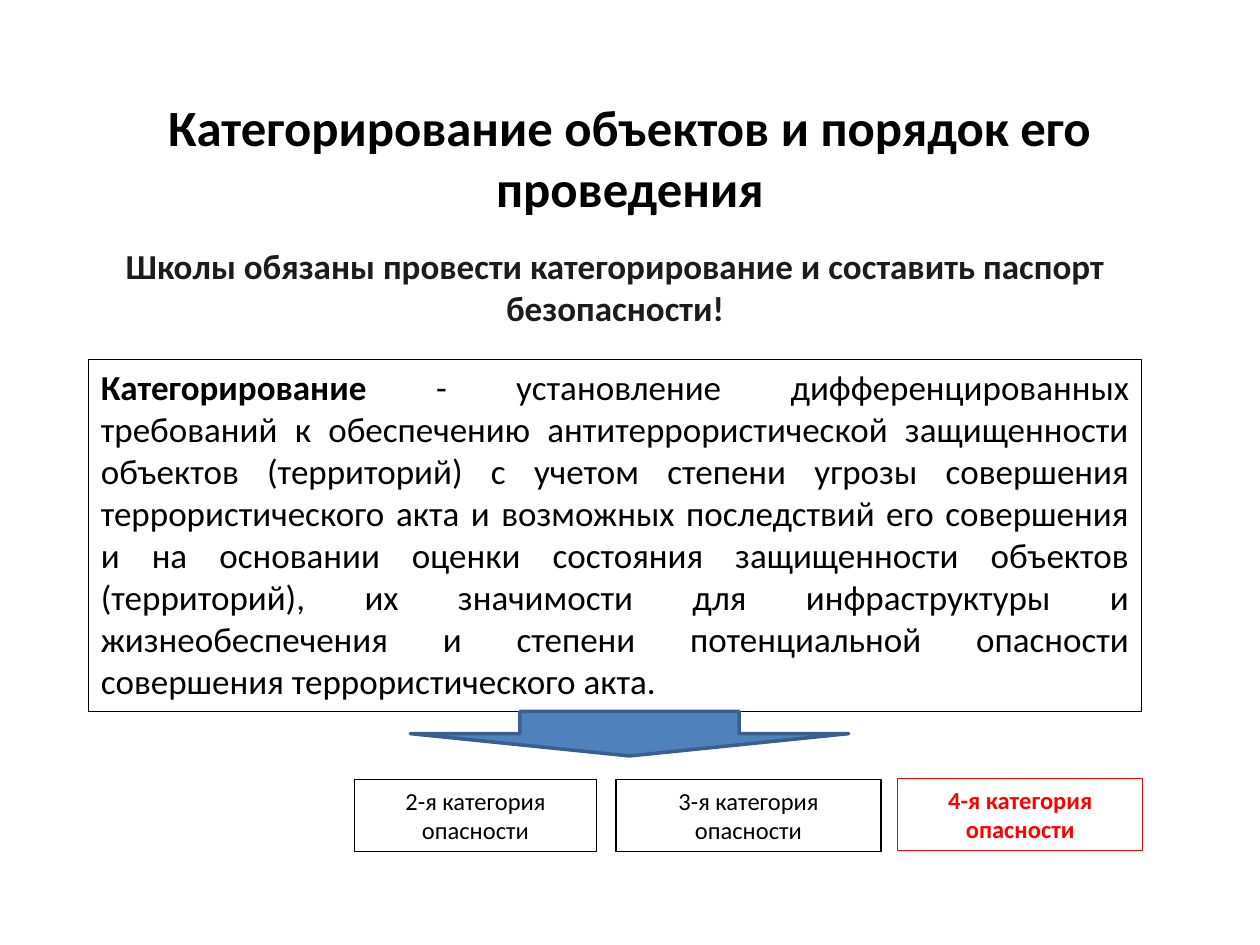
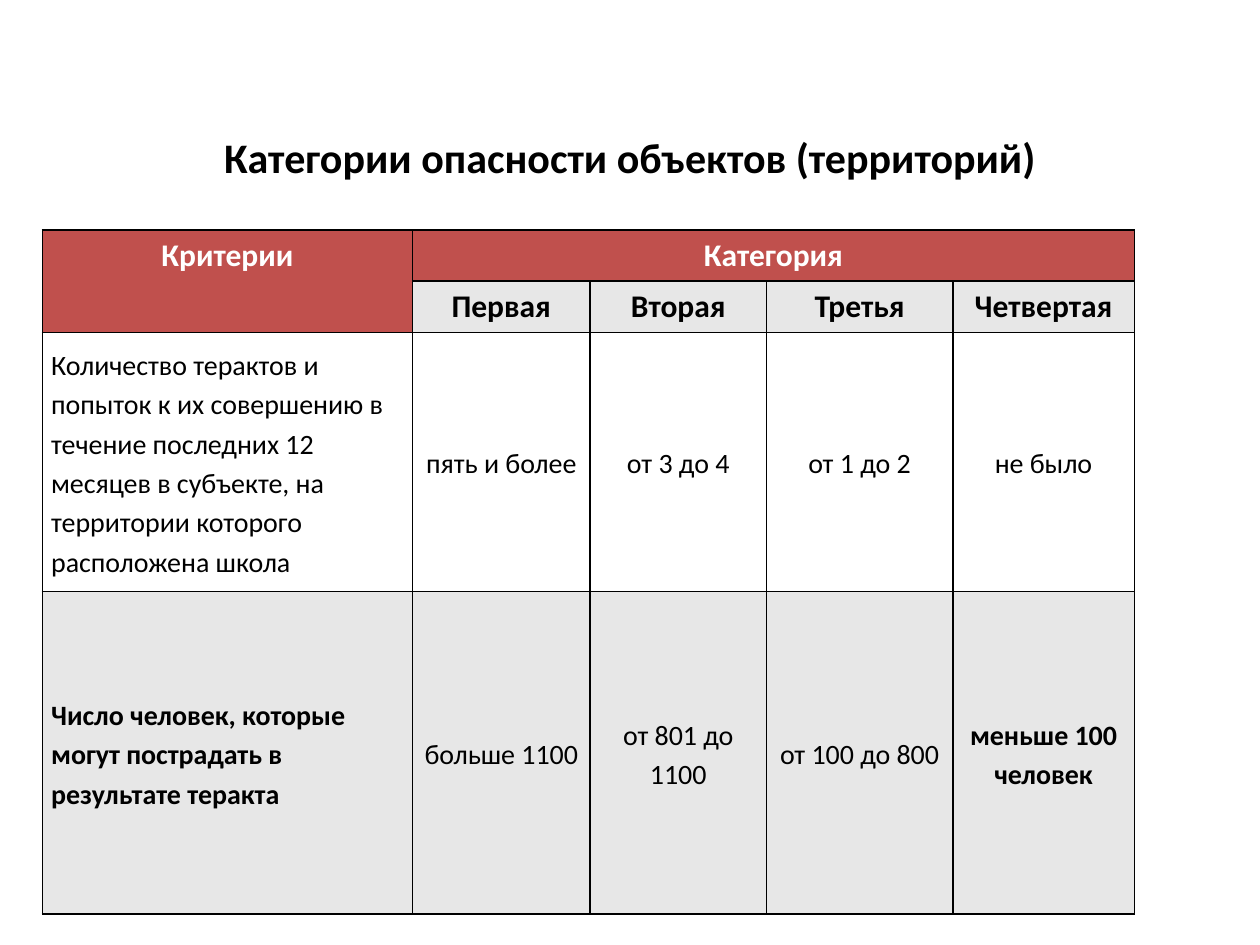
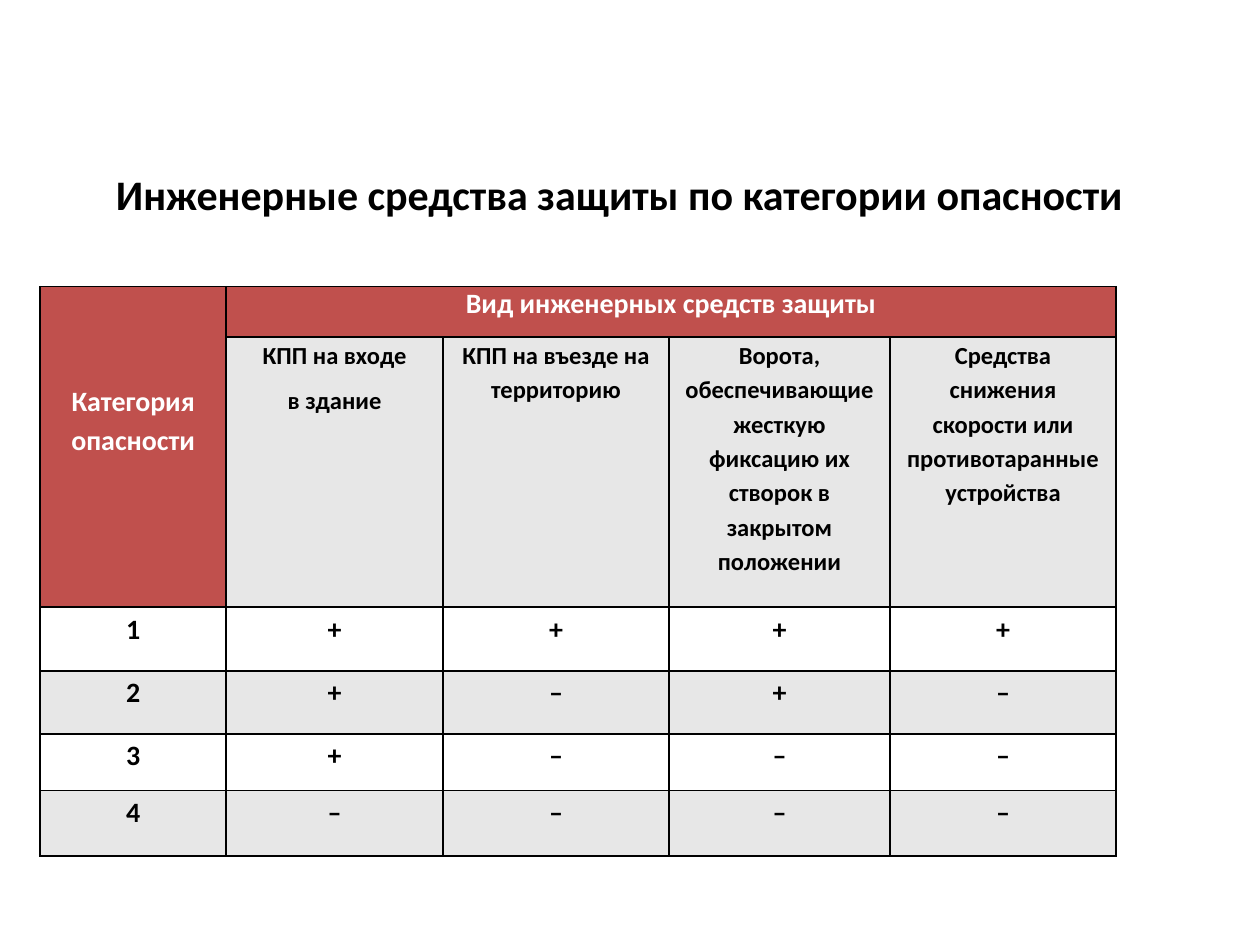
import pptx
import pptx.dml.color
import pptx.enum.shapes
import pptx.enum.text
import pptx.oxml
import pptx.oxml.ns
import pptx.util

Pt = pptx.util.Pt
ALIGN = pptx.enum.text.PP_ALIGN
ANCHOR = pptx.enum.text.MSO_ANCHOR
SHAPE = pptx.enum.shapes.MSO_SHAPE

FONT = "Calibri"
COLORS = {
    "text": "000000", "lead": "1C1C1C", "white": "FFFFFF", "alert": "FF0000",
    "header": "C0504D", "band": "E7E7E7", "arrow": "4F81BD", "arrow_line": "3A5F8C",
}
TITLE_CONTENT, TITLE_ONLY = 1, 5


def rgb(name):
    return pptx.dml.color.RGBColor.from_string(COLORS[name])


def add_run(p, text, size, color="text", bold=False):
    r = p.add_run()
    r.text = text
    r.font.name = FONT
    r.font.size = Pt(size)
    r.font.bold = bold
    r.font.color.rgb = rgb(color)


def place(sp, box):
    sp.left, sp.top, sp.width, sp.height = (Pt(v) for v in box)


def add_slide(prs, layout, title, box, size=24):
    """Slide with its title placeholder moved and formatted."""
    s = prs.slides.add_slide(prs.slide_layouts[layout])
    sp = s.shapes.title
    place(sp, box)
    tf = sp.text_frame
    tf.auto_size = pptx.enum.text.MSO_AUTO_SIZE.NONE
    tf.vertical_anchor = ANCHOR.MIDDLE
    p = tf.paragraphs[0]
    p.alignment = ALIGN.CENTER
    add_run(p, title, size, bold=True)
    return s


# Slide 1 parts
def lead_text(s, box, text):
    sp = s.placeholders[1]
    place(sp, box)
    tf = sp.text_frame
    tf.auto_size = pptx.enum.text.MSO_AUTO_SIZE.NONE
    p = tf.paragraphs[0]
    pPr = p._p.get_or_add_pPr()
    pPr.set("marL", "0")
    pPr.set("indent", "0")
    pPr.append(pptx.oxml.parse_xml(f"<a:buNone {pptx.oxml.ns.nsdecls('a')}/>"))
    p.alignment = ALIGN.CENTER
    p.space_before = Pt(0)
    add_run(p, text, 20, "lead", bold=True)


def framed_text(s, box, runs, size, line="text", align=ALIGN.CENTER):
    sp = s.shapes.add_shape(SHAPE.RECTANGLE, *(Pt(v) for v in box))
    sp.shadow.inherit = False
    sp.fill.background()
    sp.line.color.rgb = rgb(line)
    sp.line.width = Pt(0.75)
    tf = sp.text_frame
    tf.word_wrap = True
    tf.vertical_anchor = ANCHOR.TOP
    p = tf.paragraphs[0]
    p.alignment = align
    for text, bold in runs:
        add_run(p, text, size, line, bold)


def down_arrow(s, box):
    sp = s.shapes.add_shape(SHAPE.DOWN_ARROW, *(Pt(v) for v in box))
    sp.shadow.inherit = False
    sp.fill.solid()
    sp.fill.fore_color.rgb = rgb("arrow")
    sp.line.color.rgb = rgb("arrow_line")
    sp.line.width = Pt(2)


def category_boxes(s, box):
    left, top, height = box
    for number, dx, dy, width, color in (
        (2, 0, 0.5, 138.5, "text"),
        (3, 149.5, 0.5, 151.5, "text"),
        (4, 310.5, 0, 140, "alert"),
    ):
        framed_text(s, (left + dx, top + dy, width, height),
                    [(f"{number}-я категория опасности", color == "alert")], 14, color)


# Tables
def add_borders(cell):
    tcPr = cell._tc.get_or_add_tcPr()
    for i, side in enumerate(("lnL", "lnR", "lnT", "lnB")):
        tcPr.insert(i, pptx.oxml.parse_xml(
            f'<a:{side} {pptx.oxml.ns.nsdecls("a")} w="12700"><a:solidFill>'
            f'<a:srgbClr val="{COLORS["text"]}"/></a:solidFill></a:{side}>'))


def fill_cell(cell, text, fill, size, color="text", bold=False, align=ALIGN.CENTER,
              anchor=ANCHOR.TOP, spacing=1.15, side=5.5, top=0, bottom=0):
    cell.fill.solid()
    cell.fill.fore_color.rgb = rgb(fill)
    add_borders(cell)
    cell.margin_left = cell.margin_right = Pt(side)
    cell.margin_top, cell.margin_bottom = Pt(top), Pt(bottom)
    cell.vertical_anchor = anchor
    tf = cell.text_frame
    for i, line in enumerate(text.split("\n")):
        p = tf.add_paragraph() if i else tf.paragraphs[0]
        p.alignment = align
        p.line_spacing = spacing
        if i:
            p.space_before = Pt(6)
        if line:
            add_run(p, line, size, color, bold)


def category_table(s, left, top, widths, rows):
    """rows: (height, row style, cells); a cell is text or (text, own style)."""
    frame = s.shapes.add_table(len(rows), len(widths), Pt(left), Pt(top),
                               Pt(sum(widths)), Pt(sum(row[0] for row in rows)))
    table = frame.table
    table.first_row = table.horz_banding = False
    for column, width in zip(table.columns, widths):
        column.width = Pt(width)
    for i, (height, style, cells) in enumerate(rows):
        table.rows[i].height = Pt(height)
        for j, item in enumerate(cells):
            text, own = (item, {}) if isinstance(item, str) else item
            fill_cell(table.cell(i, j), text, **{**style, **own})
    # Row header spans two rows, group header spans the other columns
    table.cell(0, 0).merge(table.cell(1, 0))
    table.cell(0, 1).merge(table.cell(0, len(widths) - 1))


def categorization_slide(prs):
    s = add_slide(prs, TITLE_CONTENT, "Категорирование объектов и порядок его проведения",
                  (36, 68.5, 648, 42), 29)
    lead_text(s, (50.5, 136, 602, 340.5),
              "Школы обязаны провести категорирование и составить паспорт безопасности!")
    framed_text(s, (50.5, 205.5, 602, 201), [
        ("Категорирование ", True),
        ("- установление дифференцированных требований к обеспечению антитеррористической "
         "защищенности объектов (территорий) с учетом степени угрозы совершения "
         "террористического акта и возможных последствий его совершения и на основании "
         "оценки состояния защищенности объектов (территорий), их значимости для "
         "инфраструктуры и жизнеобеспечения и степени потенциальной опасности совершения "
         "террористического акта.", False),
    ], 20, align=ALIGN.JUSTIFY)
    down_arrow(s, (234.5, 406.5, 250.5, 25.5))
    category_boxes(s, (202.5, 445, 41))


def danger_slide(prs):
    s = add_slide(prs, TITLE_ONLY, "Категории опасности объектов (территорий)",
                  (36, 68.5, 648, 42))
    head = dict(fill="header", size=18, color="white", bold=True, spacing=1.0,
                side=7.2, top=3.6, bottom=3.6)
    subhead = {**head, "fill": "band", "color": "text"}
    body = dict(fill="white", size=16, anchor=ANCHOR.MIDDLE, side=5)
    bold = dict(bold=True)
    left = dict(align=ALIGN.LEFT)
    category_table(s, 24.25, 131.5, (211.5, 101.5, 100.75, 106.5, 103.75), (
        (29, head, ("Критерии", "Категория", "", "", "")),
        (29, subhead, (("", head), "Первая", "Вторая", "Третья", "Четвертая")),
        (148, body, (
            ("Количество терактов и попыток к их совершению в течение последних 12 месяцев "
             "в субъекте, на территории которого расположена школа", left),
            "пять и более", "от 3 до 4", "от 1 до 2", "не было")),
        (184.5, {**body, "fill": "band"}, (
            ("Число человек, которые могут пострадать в результате теракта", {**left, **bold}),
            "больше 1100", "от 801 до 1100", "от 100 до 800",
            ("меньше 100 человек", bold))),
    ))


def protection_slide(prs):
    s = add_slide(prs, TITLE_ONLY, "Инженерные средства защиты по категории опасности",
                  (30, 89.5, 648, 42.5))
    head = dict(fill="header", size=16, color="white", bold=True)
    subhead = dict(fill="band", size=14, bold=True)
    rows = [
        (28.75, {**head, "spacing": 1.0}, (
            ("Категория опасности", dict(spacing=1.15, top=53)),
            "Вид инженерных средств защиты", "", "", "")),
        (154.5, subhead, (
            ("", head), "КПП на входе\nв здание", "КПП на въезде на территорию",
            "Ворота, обеспечивающие жесткую фиксацию их створок в закрытом положении",
            "Средства снижения скорости или противотаранные устройства")),
    ]
    marks = ("++++", "+–+–", "+–––", "––––")
    for number, (height, signs) in enumerate(zip((36.5, 36, 32.25, 37.5), marks), 1):
        style = dict(fill="white" if number % 2 else "band", size=16, bold=True)
        rows.append((height, style, (str(number), *signs)))
    category_table(s, 23, 163.75, (106.25, 124, 129, 126.5, 129), rows)


def main():
    prs = pptx.Presentation()
    prs.slide_width, prs.slide_height = Pt(720), Pt(540)
    categorization_slide(prs)
    danger_slide(prs)
    protection_slide(prs)
    prs.save("out.pptx")


if __name__ == "__main__":
    main()
